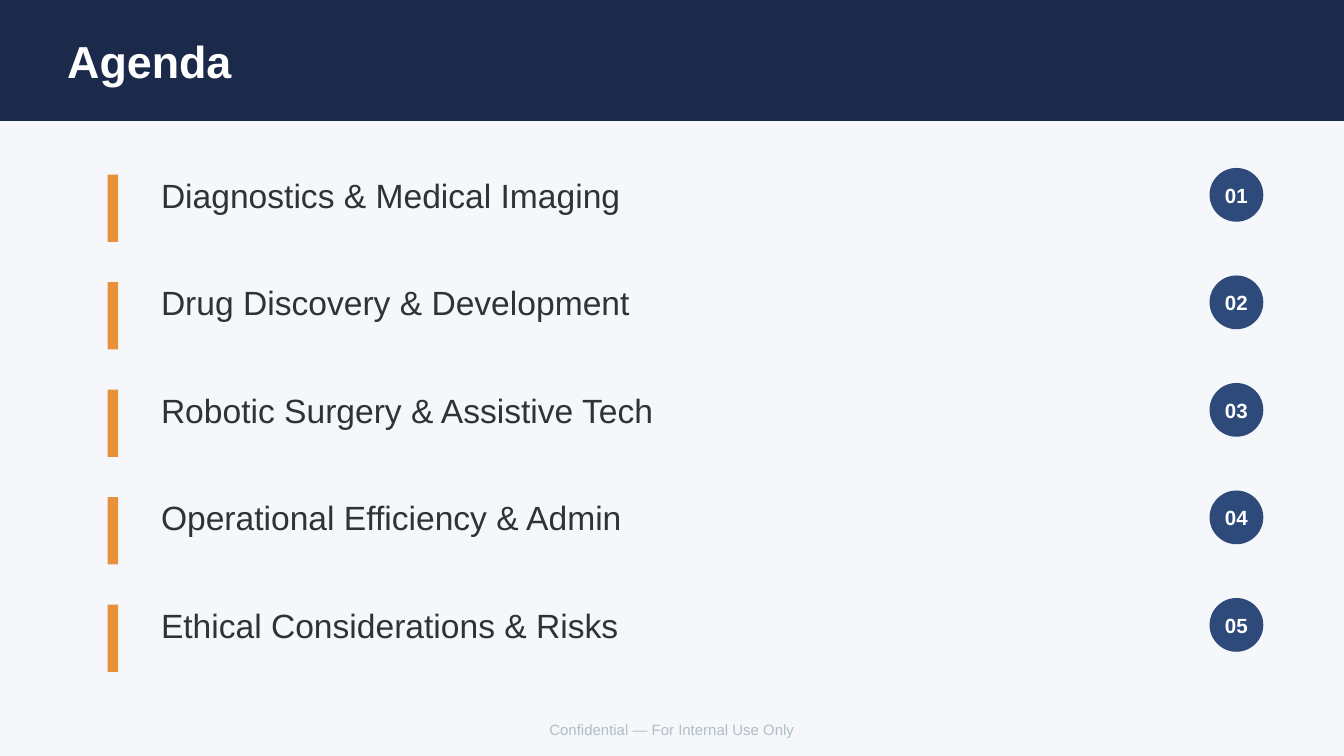
from dataclasses import dataclass

from pptx import Presentation
from pptx.dml.color import RGBColor
from pptx.enum.shapes import MSO_SHAPE as Preset
from pptx.enum.text import MSO_ANCHOR as Anchor, MSO_AUTO_SIZE as AutoSize, PP_ALIGN as Align
from pptx.shapes.autoshape import Shape
from pptx.slide import Slide
from pptx.util import Inches, Pt


@dataclass(frozen=True)
class Theme:
    font: str = "Arial"
    background: str = "F5F7FA"
    banner: str = "1B2A4A"
    accent: str = "E8913A"
    badge: str = "2E4A7A"
    text: str = "2D3436"
    light: str = "FFFFFF"
    muted: str = "B0BEC5"
    title_size: int = 24
    topic_size: int = 18
    badge_size: int = 11
    footer_size: int = 8


@dataclass(frozen=True)
class Box:
    left: float
    top: float
    width: float
    height: float

    def lengths(self) -> list[Inches]:
        return [Inches(v) for v in (self.left, self.top, self.width, self.height)]


@dataclass(frozen=True)
class AgendaItem:
    number: int
    topic: str


THEME = Theme()
FIRST_ROW_TOP = 1.2
ROW_PITCH = 0.8
TOPICS = (
    "Diagnostics & Medical Imaging",
    "Drug Discovery & Development",
    "Robotic Surgery & Assistive Tech",
    "Operational Efficiency & Admin",
    "Ethical Considerations & Risks",
)
ITEMS = [AgendaItem(number, topic) for number, topic in enumerate(TOPICS, start=1)]


def write(shape: Shape, text: str, size: int, color: str, bold: bool = False,
          align: Align = Align.LEFT, inset: float = 0.1) -> None:
    """Put one line of styled, vertically centred text in a shape."""
    frame = shape.text_frame
    frame.text = text
    frame.word_wrap = True
    frame.auto_size = AutoSize.NONE
    frame.vertical_anchor = Anchor.MIDDLE
    frame.margin_left = frame.margin_right = Inches(inset)
    frame.margin_top = frame.margin_bottom = Inches(inset / 2)
    para = frame.paragraphs[0]
    para.alignment = align
    for span in para.runs:
        span.font.name = THEME.font
        span.font.size = Pt(size)
        span.font.bold = bold
        span.font.color.rgb = RGBColor.from_string(color)


def add_block(page: Slide, preset: Preset, box: Box, color: str) -> Shape:
    block = page.shapes.add_shape(preset, *box.lengths())
    block.shadow.inherit = False
    block.fill.solid()
    block.fill.fore_color.rgb = RGBColor.from_string(color)
    block.line.fill.background()
    return block


def add_header(page: Slide, text: str) -> None:
    title = page.shapes.title
    title.left, title.top, title.width, title.height = Box(0.5, 0.2, 9, 0.5).lengths()
    write(title, text, THEME.title_size, THEME.light, bold=True, inset=0)
    # The banner goes behind the title
    banner = add_block(page, Preset.RECTANGLE, Box(0, 0, 10, 0.9), THEME.banner)
    title.element.addprevious(banner.element)


def add_item(page: Slide, item: AgendaItem) -> None:
    top = FIRST_ROW_TOP + (item.number - 1) * ROW_PITCH
    add_block(page, Preset.RECTANGLE, Box(0.8, top + 0.1, 0.08, 0.5), THEME.accent)
    label = page.shapes.add_textbox(*Box(1.1, top, 8, 0.5).lengths())
    write(label, item.topic, THEME.topic_size, THEME.text)
    badge = add_block(page, Preset.OVAL, Box(9, top + 0.05, 0.4, 0.4), THEME.badge)
    write(badge, f"{item.number:02d}", THEME.badge_size, THEME.light,
          bold=True, align=Align.CENTER, inset=0)


def add_footer(page: Slide, text: str) -> None:
    footer = page.shapes.add_textbox(*Box(0.5, 5.3, 9, 0.25).lengths())
    write(footer, text, THEME.footer_size, THEME.muted, align=Align.CENTER)


def main() -> None:
    # Widescreen 16:9 deck
    deck = Presentation()
    deck.slide_width = Inches(10)
    deck.slide_height = Inches(10 * 9 / 16)

    # Title-only page with a plain background
    page = deck.slides.add_slide(deck.slide_layouts.get_by_name("Title Only"))
    page.background.fill.solid()
    page.background.fill.fore_color.rgb = RGBColor.from_string(THEME.background)

    # Header, agenda rows and footer
    add_header(page, "Agenda")
    for item in ITEMS:
        add_item(page, item)
    add_footer(page, "Confidential — For Internal Use Only")

    deck.save("out.pptx")


if __name__ == "__main__":
    main()
